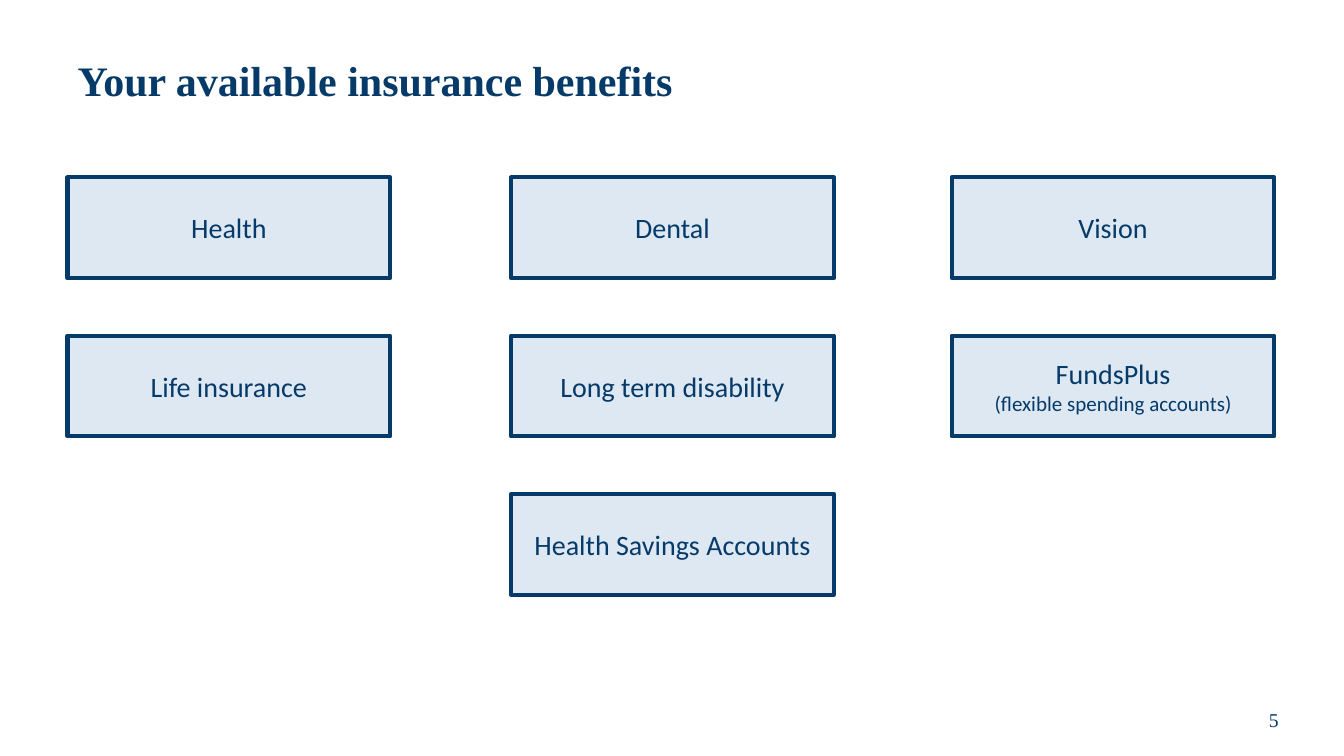
from pptx import Presentation
from pptx.dml.color import RGBColor
from pptx.enum import shapes, text
from pptx.util import Inches, Pt

# Content: (column, row, name, detail)
TITLE = "Your available insurance benefits"
PAGE_NUMBER = "5"
BENEFITS = [
    (0, 0, "Health", ""),
    (1, 0, "Dental", ""),
    (2, 0, "Vision", ""),
    (0, 1, "Life insurance", ""),
    (1, 1, "Long term disability", ""),
    (2, 1, "FundsPlus", "(flexible spending accounts)"),
    (1, 2, "Health Savings Accounts", ""),
]

# Style and grid, in inches
COLORS = {"navy": "063A68", "pale": "DDE8F3"}
HEADING_FONT, BODY_FONT = "Times New Roman", "Calibri"
COLUMN_LEFTS = (0.67, 5.07, 9.44)
FIRST_TOP, ROW_PITCH = 1.76, 1.57
BOX_WIDTH, BOX_HEIGHT, INSET = 3.2, 1, 0.1


def color(name):
    return RGBColor.from_string(COLORS[name])


def format_run(run, font, size, bold=False):
    run.font.name = font
    run.font.size = Pt(size)
    run.font.bold = bold
    run.font.color.rgb = color("navy")


def add_benefit(slide, column, row, name, detail):
    box = slide.shapes.add_shape(
        shapes.MSO_SHAPE.RECTANGLE,
        Inches(COLUMN_LEFTS[column]), Inches(FIRST_TOP + row * ROW_PITCH),
        Inches(BOX_WIDTH), Inches(BOX_HEIGHT))
    box.shadow.inherit = False
    box.fill.solid()
    box.fill.fore_color.rgb = color("pale")
    box.line.color.rgb = color("navy")
    box.line.width = Pt(3)

    frame = box.text_frame
    frame.word_wrap = True
    frame.vertical_anchor = text.MSO_ANCHOR.MIDDLE
    frame.margin_left = frame.margin_right = Inches(INSET)
    frame.margin_top = frame.margin_bottom = Inches(INSET)
    label = frame.paragraphs[0]
    label.text = f"{name}\v{detail}" if detail else name
    label.alignment = text.PP_ALIGN.CENTER
    for run, size in zip(label.runs, (20, 15)):
        format_run(run, BODY_FONT, size)


def main():
    prs = Presentation()
    prs.slide_width, prs.slide_height = Inches(13.33), Inches(7.5)
    slide = prs.slides.add_slide(prs.slide_layouts[5])

    # Title
    title = slide.shapes.title
    title.left, title.top = Inches(0.67), Inches(0.25)
    title.width, title.height = Inches(12), Inches(1.15)
    title.text_frame.text = TITLE
    title.text_frame.vertical_anchor = text.MSO_ANCHOR.MIDDLE
    heading = title.text_frame.paragraphs[0]
    heading.alignment = text.PP_ALIGN.LEFT
    heading.line_spacing = 0.9
    format_run(heading.runs[0], HEADING_FONT, 30, bold=True)

    # Benefit boxes
    for benefit in BENEFITS:
        add_benefit(slide, *benefit)

    # Page number
    page = slide.shapes.add_textbox(
        Inches(12.05), Inches(6.89), Inches(1.17), Inches(0.5)).text_frame
    page.word_wrap = True
    page.vertical_anchor = text.MSO_ANCHOR.MIDDLE
    page.text = PAGE_NUMBER
    page.paragraphs[0].alignment = text.PP_ALIGN.CENTER
    format_run(page.paragraphs[0].runs[0], HEADING_FONT, 14)

    prs.save("out.pptx")


if __name__ == "__main__":
    main()
